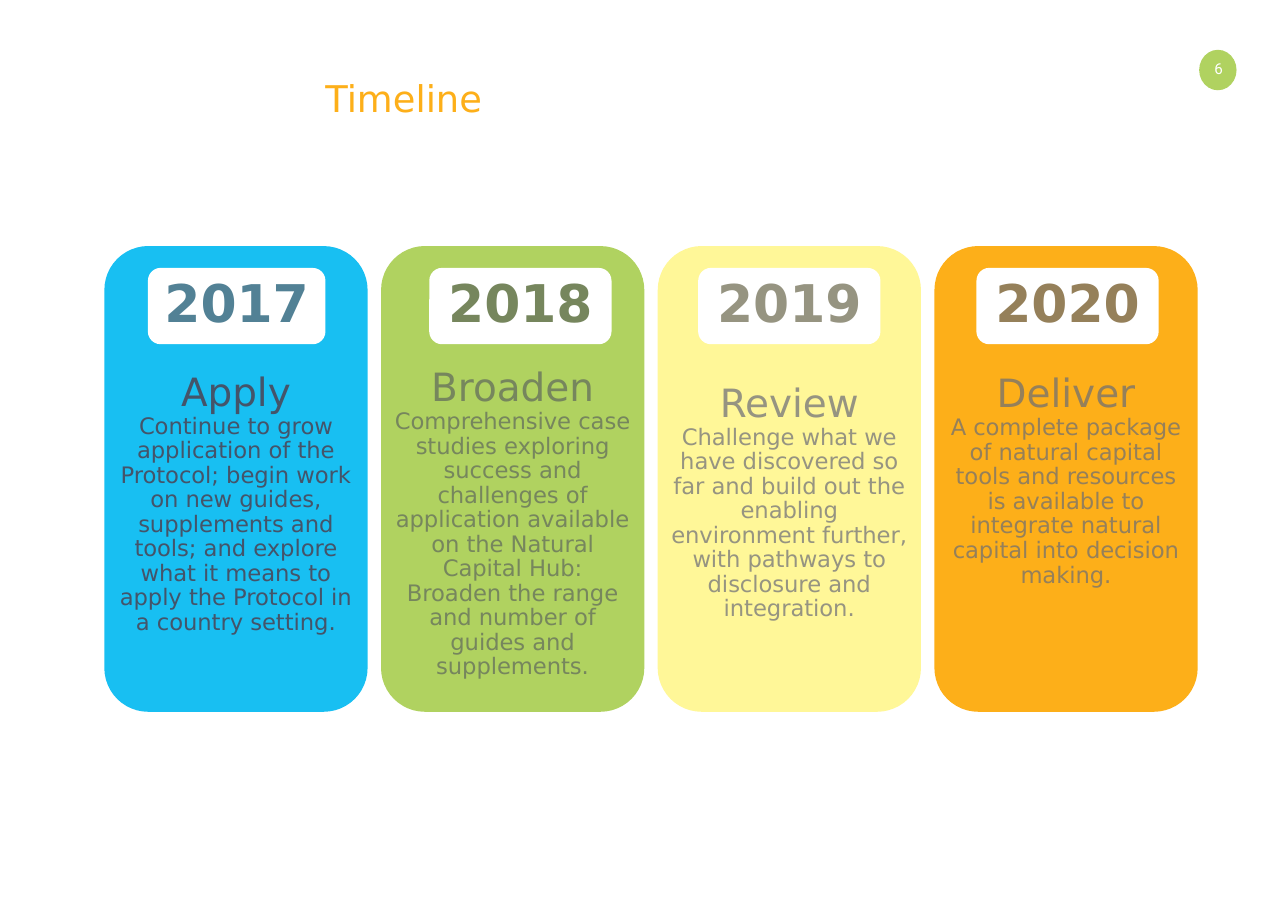
from dataclasses import dataclass

from pptx import Presentation
from pptx.dml.color import RGBColor
from pptx.enum.shapes import MSO_SHAPE
from pptx.enum.text import MSO_ANCHOR, MSO_AUTO_SIZE, PP_ALIGN
from pptx.shapes.autoshape import Shape
from pptx.slide import Slide
from pptx.text.text import TextFrame, _Paragraph
from pptx.util import Inches, Pt

WHITE = RGBColor(0xFF, 0xFF, 0xFF)
ORANGE = RGBColor(0xFD, 0xAF, 0x19)
GREEN = RGBColor(0xB0, 0xD2, 0x60)
BLUE = RGBColor(0x18, 0xBF, 0xF2)
YELLOW = RGBColor(0xFF, 0xF7, 0x98)
SLATE = RGBColor(0x44, 0x54, 0x6A)
STEEL = RGBColor(0x52, 0x81, 0x95)
OLIVE = RGBColor(0x76, 0x86, 0x5D)
STONE = RGBColor(0x96, 0x94, 0x81)
BROWN = RGBColor(0x95, 0x80, 0x5A)

BODY_FONT = "DejaVu Sans"
NUMBER_FONT = "Roboto"

FIRST_CARD, LAST_CARD = 0.67, 6.0
CARD_TOP, CARD_WIDTH, CARD_HEIGHT = 1.58, 1.69, 2.99
BADGE_TOP, BADGE_HEIGHT = 1.72, 0.49
LINE_SPACING = 0.9


@dataclass(frozen=True)
class Milestone:
    year: str
    heading: str
    description: str
    fill: RGBColor
    text_color: RGBColor
    year_color: RGBColor
    badge_offset: float
    badge_width: float
    heading_drop: float


MILESTONES = [
    Milestone("2017", "Apply",
              "Continue to grow application of the Protocol; begin work on new guides, "
              "supplements and tools; and explore what it means to apply the Protocol "
              "in a country setting.",
              BLUE, SLATE, STEEL, 0.28, 1.14, 0.73),
    Milestone("2018", "Broaden",
              "Comprehensive case studies exploring success and challenges of application "
              "available on the Natural Capital Hub: Broaden the range and number of "
              "guides and supplements.",
              GREEN, OLIVE, OLIVE, 0.31, 1.17, 0.7),
    Milestone("2019", "Review",
              "Challenge what we have discovered so far and build out the enabling "
              "environment further, with pathways to disclosure and integration.",
              YELLOW, STONE, STONE, 0.26, 1.17, 0.8),
    Milestone("2020", "Deliver",
              "A complete package of natural capital tools and resources is available to "
              "integrate natural capital into decision making.",
              ORANGE, BROWN, BROWN, 0.27, 1.17, 0.74),
]


def set_margins(frame: TextFrame, horizontal: float, vertical: float) -> None:
    frame.margin_left = frame.margin_right = Inches(horizontal)
    frame.margin_top = frame.margin_bottom = Inches(vertical)


def write(paragraph: _Paragraph, text: str, size: float, color: RGBColor,
          font_name: str = BODY_FONT, bold: bool = False,
          align: PP_ALIGN = PP_ALIGN.CENTER) -> None:
    paragraph.text = text
    paragraph.alignment = align
    for run in paragraph.runs:
        run.font.name = font_name
        run.font.size = Pt(size)
        run.font.bold = bold
        run.font.color.rgb = color


def add_filled(slide: Slide, kind: MSO_SHAPE, left: float, top: float,
               width: float, height: float, fill: RGBColor) -> Shape:
    """Add a flat shape without outline or shadow."""
    shape = slide.shapes.add_shape(kind, Inches(left), Inches(top),
                                   Inches(width), Inches(height))
    shape.shadow.inherit = False
    shape.fill.solid()
    shape.fill.fore_color.rgb = fill
    shape.line.fill.background()
    return shape


def add_title(slide: Slide) -> None:
    title = slide.shapes.title
    title.left, title.top = Inches(2.01), Inches(0.39)
    title.width, title.height = Inches(4.57), Inches(0.48)
    frame = title.text_frame
    frame.auto_size = MSO_AUTO_SIZE.NONE
    frame.vertical_anchor = MSO_ANCHOR.MIDDLE
    set_margins(frame, 0.08, 0.04)
    write(frame.paragraphs[0], "Timeline", 17, ORANGE, align=PP_ALIGN.LEFT)


def add_page_number(slide: Slide) -> None:
    add_filled(slide, MSO_SHAPE.OVAL, 7.7, 0.32, 0.24, 0.26, GREEN)
    number = slide.shapes.add_textbox(Inches(7.68), Inches(0.34),
                                      Inches(0.29), Inches(0.2))
    frame = number.text_frame
    frame.word_wrap = False
    set_margins(frame, 0.08, 0.04)
    write(frame.paragraphs[0], "6", 7, WHITE, NUMBER_FONT)


def add_milestone(slide: Slide, milestone: Milestone, left: float) -> None:
    card = add_filled(slide, MSO_SHAPE.ROUNDED_RECTANGLE, left, CARD_TOP,
                      CARD_WIDTH, CARD_HEIGHT, milestone.fill)
    frame = card.text_frame
    frame.word_wrap = True
    frame.vertical_anchor = MSO_ANCHOR.TOP
    set_margins(frame, 0, 0)
    frame.margin_top = Inches(milestone.heading_drop)
    write(frame.paragraphs[0], milestone.heading, 18, milestone.text_color)
    write(frame.add_paragraph(), milestone.description, 10.5, milestone.text_color)
    for paragraph in frame.paragraphs:
        paragraph.line_spacing = LINE_SPACING

    badge = add_filled(slide, MSO_SHAPE.ROUNDED_RECTANGLE, left + milestone.badge_offset,
                       BADGE_TOP, milestone.badge_width, BADGE_HEIGHT, WHITE)
    frame = badge.text_frame
    frame.vertical_anchor = MSO_ANCHOR.MIDDLE
    set_margins(frame, 0.04, 0.04)
    year = frame.paragraphs[0]
    write(year, milestone.year, 24, milestone.year_color, bold=True)
    year.line_spacing = LINE_SPACING


def main() -> None:
    presentation = Presentation()
    presentation.slide_width, presentation.slide_height = Inches(8.27), Inches(5.83)
    slide = presentation.slides.add_slide(presentation.slide_layouts[5])
    add_page_number(slide)
    add_title(slide)
    pitch = (LAST_CARD - FIRST_CARD) / (len(MILESTONES) - 1)
    for index, milestone in enumerate(MILESTONES):
        add_milestone(slide, milestone, FIRST_CARD + index * pitch)
    presentation.save("out.pptx")


if __name__ == "__main__":
    main()
